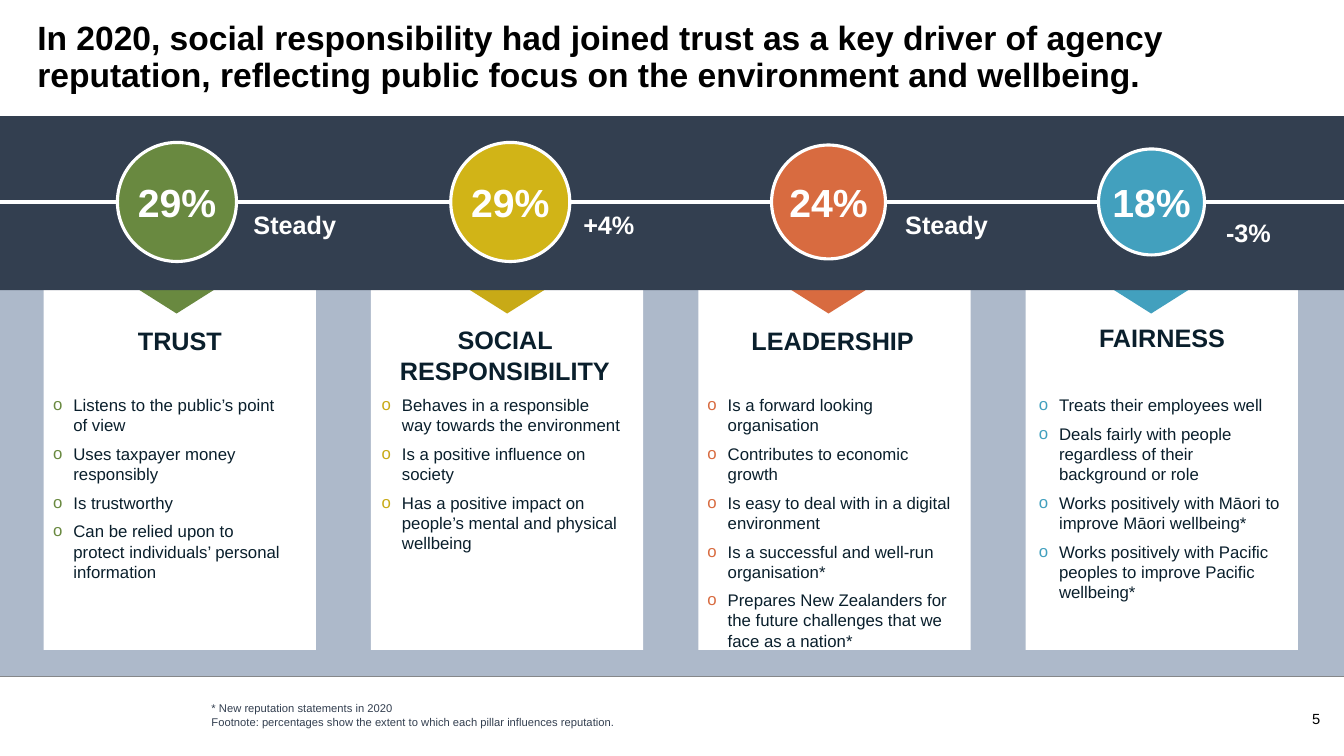
from dataclasses import dataclass

import lxml.etree
import pptx
import pptx.dml.color
import pptx.enum.shapes
import pptx.enum.text
import pptx.oxml.ns
import pptx.util

Cm = pptx.util.Cm
Pt = pptx.util.Pt
Shapes = pptx.enum.shapes.MSO_SHAPE
Align = pptx.enum.text.PP_ALIGN
Anchor = pptx.enum.text.MSO_ANCHOR

COLOURS = {
    "white": "FFFFFF", "black": "000000", "grey": "808080",
    "navy": "333F50", "mist": "ADB9CA", "ink": "0A1F2C",
    "green": "698940", "gold": "D1B417", "dark gold": "C8AA16",
    "orange": "D86B40", "blue": "42A0BE",
}
FONT = "Arial"
PAGE_WIDTH, PAGE_HEIGHT = 33.87, 19.05
BAND_TOP, BAND_BOTTOM, BACKDROP_BOTTOM = 2.93, 7.31, 17.04
TIMELINE_Y = 5.09
CARD_LEFT, CARD_STEP, CARD_WIDTH, CARD_HEIGHT = 1.1, 8.25, 6.86, 9.07
POINTER_WIDTH, POINTER_HEIGHT = 1.93, 0.61
BULLET_INDENT = 0.51


@dataclass(frozen=True)
class Area:
    """A rectangle in centimetres."""
    left: float
    top: float
    width: float
    height: float

    def lengths(self) -> list[pptx.util.Length]:
        return [Cm(value) for value in (self.left, self.top, self.width, self.height)]


@dataclass(frozen=True)
class Pillar:
    name: str
    share: str
    change: str
    circle_colour: str
    accent: str
    circle_centre: float
    diameter: float
    pointer_centre: float
    heading: Area
    bullets: Area
    change_area: Area
    change_align: Align
    statements: tuple[str, ...]


PILLARS = (
    Pillar("TRUST", "29%", "Steady", "green", "green", 4.46, 3.0, 4.45,
           Area(1.17, 8.08, 6.73, 1.57), Area(1.09, 9.83, 6.38, 5.0),
           Area(6.01, 5.16, 2.84, 1.02), Align.CENTER,
           ("Listens to the public’s point of view",
            "Uses taxpayer money responsibly",
            "Is trustworthy",
            "Can be relied upon to protect individuals’ personal information")),
    Pillar("SOCIAL RESPONSIBILITY", "29%", "+4%", "gold", "dark gold", 12.86, 3.0, 12.78,
           Area(9.23, 8.06, 6.99, 1.57), Area(9.37, 9.83, 6.58, 4.27),
           Area(14.45, 5.16, 2.01, 1.02), Align.LEFT,
           ("Behaves in a responsible way towards the environment",
            "Is a positive influence on society",
            "Has a positive impact on people’s mental and physical wellbeing")),
    Pillar("LEADERSHIP", "24%", "Steady", "orange", "orange", 20.88, 2.87, 20.88,
           Area(17.39, 8.08, 7.19, 1.57), Area(17.58, 9.83, 6.96, 6.25),
           Area(22.52, 5.16, 2.67, 1.02), Align.CENTER,
           ("Is a forward looking organisation",
            "Contributes to economic growth",
            "Is easy to deal with in a digital environment",
            "Is a successful and well-run organisation*",
            "Prepares New Zealanders for the future challenges that we face as a nation*")),
    Pillar("FAIRNESS", "18%", "-3%", "blue", "blue", 29.02, 2.67, 29.01,
           Area(25.87, 8.0, 6.83, 1.57), Area(25.93, 9.83, 6.65, 5.72),
           Area(30.65, 5.36, 2.92, 1.02), Align.LEFT,
           ("Treats their employees well",
            "Deals fairly with people regardless of their background or role",
            "Works positively with Māori to improve Māori wellbeing*",
            "Works positively with Pacific peoples to improve Pacific wellbeing*")),
)


def rgb(colour: str) -> pptx.dml.color.RGBColor:
    return pptx.dml.color.RGBColor.from_string(COLOURS[colour])


def write(frame: pptx.text.text.TextFrame, text: str, size: float, colour: str,
          bold: bool = False, align: Align = Align.LEFT) -> None:
    frame.text = text
    for para in frame.paragraphs:
        para.alignment = align
        for span in para.runs:
            span.font.name = FONT
            span.font.size = Pt(size)
            span.font.bold = bold
            span.font.color.rgb = rgb(colour)


def add_text(page: pptx.slide.Slide, area: Area, text: str, size: float, colour: str,
             bold: bool = False, align: Align = Align.LEFT) -> pptx.text.text.TextFrame:
    frame = page.shapes.add_textbox(*area.lengths()).text_frame
    frame.word_wrap = True
    write(frame, text, size, colour, bold, align)
    return frame


def add_filled(page: pptx.slide.Slide, kind: Shapes, area: Area,
               colour: str) -> pptx.shapes.autoshape.Shape:
    shape = page.shapes.add_shape(kind, *area.lengths())
    shape.shadow.inherit = False
    shape.fill.solid()
    shape.fill.fore_color.rgb = rgb(colour)
    shape.line.fill.background()
    return shape


def add_rule(page: pptx.slide.Slide, y: float, colour: str, weight: float) -> None:
    """Draw a horizontal line across the whole page."""
    rule = page.shapes.add_connector(
        pptx.enum.shapes.MSO_CONNECTOR.STRAIGHT, 0, Cm(y), Cm(PAGE_WIDTH), Cm(y))
    rule.line.color.rgb = rgb(colour)
    rule.line.width = Pt(weight)
    lxml.etree.SubElement(rule._element.spPr, pptx.oxml.ns.qn("a:effectLst"))


def add_bullets(page: pptx.slide.Slide, pillar: Pillar) -> None:
    qn = pptx.oxml.ns.qn
    frame = add_text(page, pillar.bullets, "\n".join(pillar.statements), 12, "ink")
    for para in frame.paragraphs:
        para.space_after = Pt(6)
        properties = para._p.get_or_add_pPr()
        properties.set("marL", str(Cm(BULLET_INDENT)))
        properties.set("indent", str(Cm(-BULLET_INDENT)))
        bullet_colour = lxml.etree.SubElement(properties, qn("a:buClr"))
        lxml.etree.SubElement(bullet_colour, qn("a:srgbClr"), val=COLOURS[pillar.accent])
        lxml.etree.SubElement(properties, qn("a:buFont"), typeface=FONT)
        lxml.etree.SubElement(properties, qn("a:buChar"), char="o")


def add_card(page: pptx.slide.Slide, index: int, pillar: Pillar) -> None:
    left = CARD_LEFT + index * CARD_STEP
    add_filled(page, Shapes.RECTANGLE,
               Area(left, BAND_BOTTOM, CARD_WIDTH, CARD_HEIGHT), "white")
    add_bullets(page, pillar)
    add_text(page, pillar.heading, pillar.name, 18, "ink", True, Align.CENTER)
    pointer = add_filled(page, Shapes.ISOSCELES_TRIANGLE,
                         Area(pillar.pointer_centre - POINTER_WIDTH / 2, BAND_BOTTOM - 0.02,
                              POINTER_WIDTH, POINTER_HEIGHT), pillar.accent)
    pointer.rotation = 180


def add_circle(page: pptx.slide.Slide, pillar: Pillar) -> None:
    radius = pillar.diameter / 2
    circle = add_filled(page, Shapes.OVAL,
                        Area(pillar.circle_centre - radius, TIMELINE_Y - radius,
                             pillar.diameter, pillar.diameter), pillar.circle_colour)
    circle.line.color.rgb = rgb("white")
    circle.line.width = Pt(2.25)
    frame = circle.text_frame
    frame.margin_left = frame.margin_right = frame.margin_top = frame.margin_bottom = 0
    frame.word_wrap = False
    frame.vertical_anchor = Anchor.MIDDLE
    write(frame, pillar.share, 28, "white", True, Align.CENTER)
    add_text(page, pillar.change_area, pillar.change, 18, "white", True, pillar.change_align)


def main() -> None:
    deck = pptx.Presentation()
    deck.slide_width, deck.slide_height = Cm(PAGE_WIDTH), Cm(PAGE_HEIGHT)
    page = deck.slides.add_slide(deck.slide_layouts[6])

    add_rule(page, BACKDROP_BOTTOM, "grey", 0.5)
    add_text(page, Area(31.21, 17.75, 2.31, 0.74), "5", 10.5, "black", align=Align.RIGHT)
    add_filled(page, Shapes.RECTANGLE,
               Area(0, BAND_TOP, PAGE_WIDTH, BACKDROP_BOTTOM - BAND_TOP), "mist")
    title = add_text(page, Area(0.69, 0.69, 29.97, 1.55),
                     "In 2020, social responsibility had joined trust as a key driver of agency "
                     "reputation, reflecting public focus on the environment and wellbeing.",
                     24, "black", True)
    title.vertical_anchor = Anchor.MIDDLE
    title.paragraphs[0].line_spacing = 0.9

    for index, pillar in enumerate(PILLARS):
        add_card(page, index, pillar)
    add_text(page, Area(5.08, 17.56, 12.07, 0.94),
             "* New reputation statements in 2020\n"
             "Footnote: percentages show the extent to which each pillar influences reputation.",
             8, "navy")

    add_filled(page, Shapes.RECTANGLE,
               Area(0, BAND_TOP, PAGE_WIDTH, BAND_BOTTOM - BAND_TOP), "navy")
    add_rule(page, TIMELINE_Y, "white", 2.25)
    for pillar in PILLARS:
        add_circle(page, pillar)
    deck.save("out.pptx")


if __name__ == "__main__":
    main()
